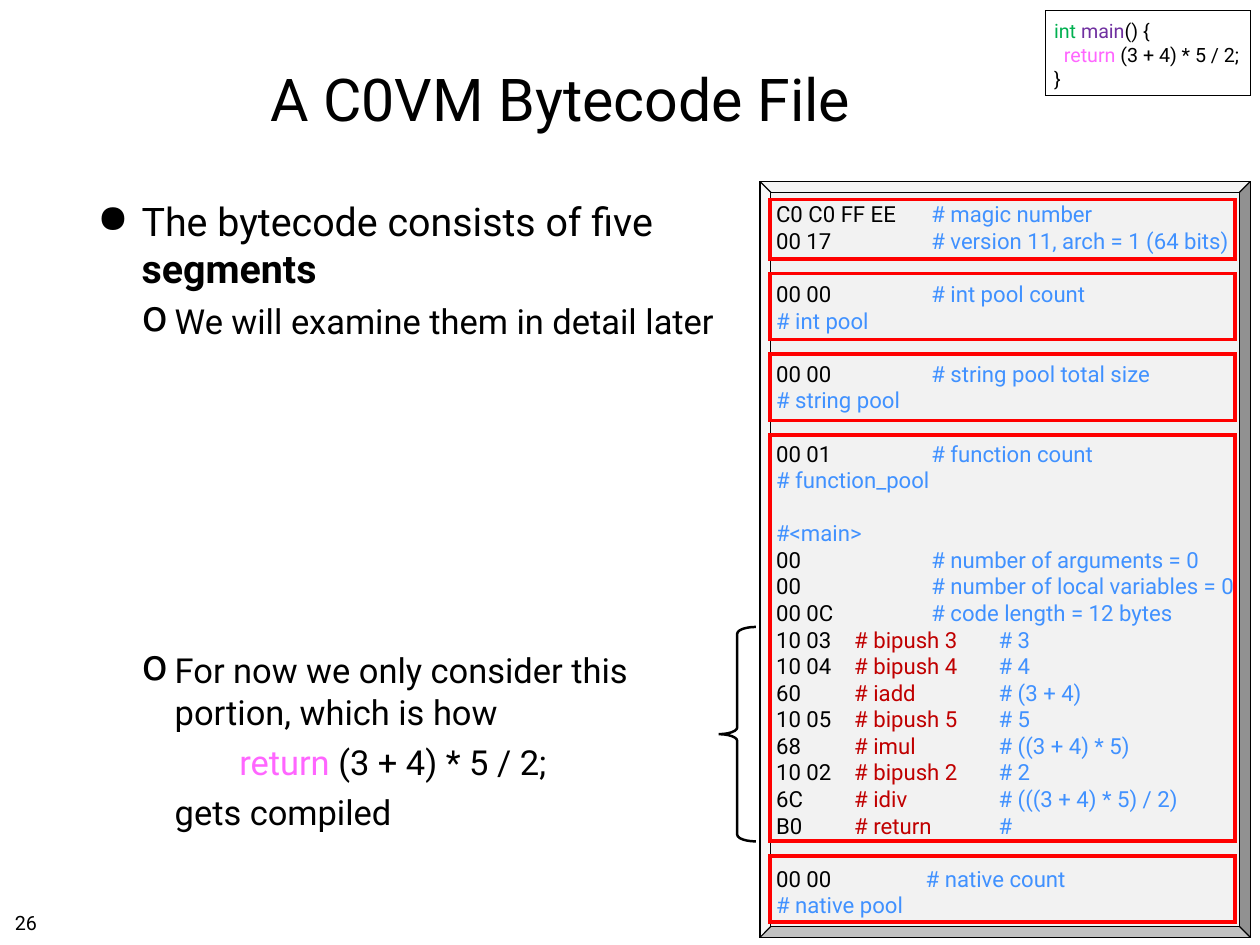
from dataclasses import dataclass
from itertools import accumulate

from lxml.etree import SubElement
from pptx import Presentation
from pptx.dml.color import RGBColor
from pptx.enum.shapes import MSO_SHAPE as Kind
from pptx.enum.text import MSO_ANCHOR as Anchor, PP_ALIGN as Align
from pptx.oxml.ns import qn
from pptx.util import Cm, Pt

BLACK = RGBColor(0, 0, 0)
WHITE = RGBColor(0xFF, 0xFF, 0xFF)
GREY = RGBColor(0xF2, 0xF2, 0xF2)
RED = RGBColor(0xFF, 0, 0)
WINE = RGBColor(0xC0, 0, 0)
BLUE = RGBColor(0x40, 0x91, 0xFF)
PINK = RGBColor(0xFF, 0x66, 0xFF)
GREEN = RGBColor(0, 0xB0, 0x50)
PURPLE = RGBColor(0x70, 0x30, 0xA0)

FACE = "Roboto"
PAD = 0.15
GAP = 0.42
ROW = 21.6


@dataclass(frozen=True)
class Run:
    text: str
    color: RGBColor = BLACK
    bold: bool = False


@dataclass(frozen=True)
class Para:
    runs: tuple[Run, ...]
    size: float
    before: float = 0
    left: float = 0
    hang: float = 0
    mark: str = ""
    scale: int = 100
    tabs: tuple[float, ...] = ()
    align: Align = Align.LEFT


@dataclass(frozen=True)
class Segment:
    height: float
    rows: tuple[str, ...]
    stop: float = 4.45


SEGMENTS = (
    Segment(1.7, ("C0 C0 FF EE|# magic number",
                  "00 17|# version 11, arch = 1 (64 bits)")),
    Segment(1.9, ("00 00|# int pool count", "# int pool")),
    Segment(1.9, ("00 00|# string pool total size", "# string pool")),
    Segment(11.64, (
        "00 01|# function count",
        "# function_pool",
        "#<main>",
        "00|# number of arguments = 0",
        "00|# number of local variables = 0",
        "00 0C|# code length = 12 bytes",
        "10 03|# bipush 3|# 3",
        "10 04|# bipush 4|# 4",
        "60|# iadd|# (3 + 4)",
        "10 05|# bipush 5|# 5",
        "68|# imul|# ((3 + 4) * 5)",
        "10 02|# bipush 2|# 2",
        "6C|# idiv|# (((3 + 4) * 5) / 2)",
        "B0|# return|#")),
    Segment(1.9, ("00 00|# native count", "# native pool"), 4.29),
)

BODY = (
    Para((Run("The bytecode consists of five "), Run("segments", bold=True)),
         32, 8, 1.27, -1.27, "●"),
    Para((Run("We will examine them in detail later"),),
         28, 7, 2.22, -0.95, "o", 125),
    Para((Run("For now we only consider this\nportion, which is how"),),
         28, 250, 2.22, -0.95, "o", 125),
    Para((Run("return", PINK), Run(" (3 + 4) * 5 / 2;")), 28, 7, 4.07),
    Para((Run("gets compiled"),), 28, 7, 2.22),
)

SOURCE = (
    Para((Run("int ", GREEN), Run("main", PURPLE), Run("() {")), 16),
    Para((Run("return", PINK), Run(" (3 + 4) * 5 / 2;")), 16, left=0.28),
    Para((Run("}"),), 16),
)


def code(row: str, seg: Segment, start: bool) -> Para:
    cells = row.split("|")
    runs = []
    for i, cell in enumerate(cells):
        last = i == len(cells) - 1
        color = BLACK if cell[0] != "#" else BLUE if last else WINE
        runs.append(Run(cell if last else cell + "\t", color))
    tabs = (2.24, 6.38) if len(cells) == 3 else (seg.stop,)
    return Para(tuple(runs), 18, ROW if start else 0, tabs=tabs)


def listing() -> list[Para]:
    return [code(row, seg, row == "#<main>" or (i == 0 and seg is not SEGMENTS[0]))
            for seg in SEGMENTS for i, row in enumerate(seg.rows)]


def write(shape, paras, wrap: bool = True, anchor: Anchor = Anchor.TOP,
          pad: float = PAD) -> None:
    frame = shape.text_frame
    frame.word_wrap = wrap
    frame.vertical_anchor = anchor
    frame.margin_left = frame.margin_top = Cm(pad)
    frame.margin_right = frame.margin_bottom = Cm(PAD)
    for i, item in enumerate(paras):
        para = frame.add_paragraph() if i else frame.paragraphs[0]
        para.alignment = item.align
        para.space_before = Pt(item.before)
        props = para._p.get_or_add_pPr()
        if item.left:
            props.set("marL", str(Cm(item.left)))
            props.set("indent", str(Cm(item.hang)))
        if item.mark:
            tint = SubElement(props, qn("a:buClr"))
            SubElement(tint, qn("a:srgbClr"), val=str(BLACK))
            SubElement(props, qn("a:buSzPct"), val=str(item.scale * 1000))
            SubElement(props, qn("a:buChar"), char=item.mark)
        if item.tabs:
            stops = SubElement(props, qn("a:tabLst"))
            for stop in item.tabs:
                SubElement(stops, qn("a:tab"), pos=str(Cm(stop)), algn="l")
        para.font.name = FACE
        para.font.size = Pt(item.size)
        for part in item.runs:
            for j, line in enumerate(part.text.split("\n")):
                if j:
                    para.add_line_break()
                run = para.add_run()
                run.text = line
                run.font.color.rgb = part.color
                run.font.bold = part.bold


def label(slide, x: float, y: float, w: float, h: float, paras, **opts) -> None:
    write(slide.shapes.add_textbox(Cm(x), Cm(y), Cm(w), Cm(h)), paras, **opts)


def draw(slide, kind: Kind, x: float, y: float, w: float, h: float,
         color: RGBColor, width: float, fill: RGBColor | None = None):
    shape = slide.shapes.add_shape(kind, Cm(x), Cm(y), Cm(w), Cm(h))
    shape.shadow.inherit = False
    if fill is None:
        shape.fill.background()
    else:
        shape.fill.solid()
        shape.fill.fore_color.rgb = fill
    shape.line.color.rgb = color
    shape.line.width = Pt(width)
    SubElement(shape.line._get_or_add_ln(), qn("a:miter"), lim="800000")
    return shape


def main() -> None:
    deck = Presentation()
    deck.slide_width, deck.slide_height = Cm(36.12), Cm(27.1)
    slide = deck.slides.add_slide(deck.slide_layouts[6])

    title = Para((Run("A C0VM Bytecode File"),), 48, align=Align.CENTER)
    label(slide, 2.64, 0.71, 26.85, 4.17, [title], anchor=Anchor.MIDDLE)
    label(slide, 2.64, 5.51, 19.23, 19.15, BODY)

    box = draw(slide, Kind.RECTANGLE, 29.97, 0.3, 5.87, 2.44, BLACK, 1, WHITE)
    write(box, SOURCE, wrap=False, pad=0.25)

    panel = draw(slide, Kind.BEVEL, 21.79, 5.21, 14.05, 21.67, BLACK, 1, GREY)
    panel.adjustments[0] = 0.022
    write(panel, listing(), wrap=False, anchor=Anchor.MIDDLE)

    tops = accumulate((seg.height + GAP for seg in SEGMENTS), initial=5.72)
    for seg, top in zip(SEGMENTS, tops):
        draw(slide, Kind.RECTANGLE, 22.07, top, 13.34, seg.height, RED, 3)

    brace = draw(slide, Kind.LEFT_BRACE, 20.6, 17.98, 1.07, 6.15, BLACK, 2)
    brace.adjustments[0] = 0.18
    label(slide, 0.28, 25.98, 0.94, 0.89, [Para((Run("26"),), 16)], wrap=False)

    deck.save("out.pptx")


if __name__ == "__main__":
    main()
